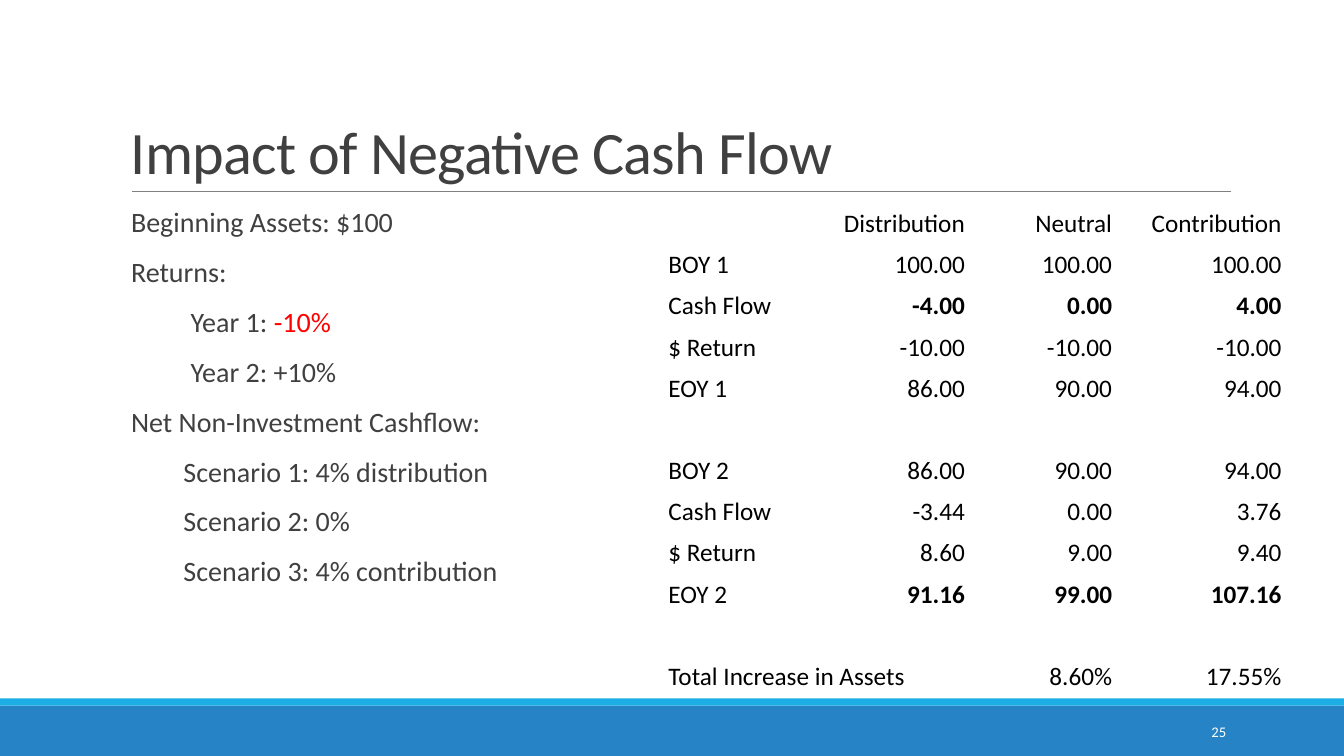
from dataclasses import dataclass
from pptx import Presentation
from pptx.dml.color import RGBColor
from pptx.enum.shapes import MSO_CONNECTOR, MSO_SHAPE
from pptx.enum.text import MSO_ANCHOR, PP_ALIGN
from pptx.oxml.ns import qn
from pptx.util import Inches, Pt
from lxml.etree import SubElement


@dataclass(frozen=True)
class Theme:
    font: str = "Calibri"
    band: str = "2683C6"
    strip: str = "1CADE4"
    rule: str = "808080"
    text: str = "404040"
    loss: str = "FF0000"
    cell: str = "000000"
    page: str = "FFFFFF"
    title_size: float = 43
    body_size: float = 20
    cell_size: float = 18
    page_size: float = 10.5


BODY = [
    (0.1, ["Beginning Assets: $100"]),
    (0.1, ["Returns:"]),
    (0.69, ["Year 1: ", "-10%"]),
    (0.69, ["Year 2: +10%"]),
    (0.1, ["Net Non-Investment Cashflow:"]),
    (0.62, ["Scenario 1: 4% distribution"]),
    (0.62, ["Scenario 2: 0%"]),
    (0.62, ["Scenario 3: 4% contribution"]),
]
FLOWS = [
    ["", "Distribution", "Neutral", "Contribution"],
    ["BOY 1", "100.00", "100.00", "100.00"],
    ["Cash Flow", "-4.00", "0.00", "4.00"],
    ["$ Return", "-10.00", "-10.00", "-10.00"],
    ["EOY 1", "86.00", "90.00", "94.00"],
    [""] * 4,
    ["BOY 2", "86.00", "90.00", "94.00"],
    ["Cash Flow", "-3.44", "0.00", "3.76"],
    ["$ Return", "8.60", "9.00", "9.40"],
    ["EOY 2", "91.16", "99.00", "107.16"],
    [""] * 4,
    ["Total Increase in Assets", "", "8.60%", "17.55%"],
]
BOLD_ROWS = {2, 9}


class Deck:
    """Holds the theme and draws on the current slide; lengths are in inches."""

    def __init__(self, theme):
        self.theme = theme
        self.file = Presentation()
        self.file.slide_width = Inches(13.33)
        self.file.slide_height = Inches(7.5)
        self.slide = self.file.slides.add_slide(self.file.slide_layouts[6])

    def style(self, para, size, color, bold=False):
        font = para.font
        font.name, font.size, font.bold = self.theme.font, Pt(size), bold
        font.color.rgb = RGBColor.from_string(color)

    def bar(self, top, height, color):
        bar = self.slide.shapes.add_shape(
            MSO_SHAPE.RECTANGLE, 0, Inches(top), self.file.slide_width, Inches(height))
        bar.shadow.inherit = False
        bar.fill.solid()
        bar.fill.fore_color.rgb = RGBColor.from_string(color)
        bar.line.fill.background()

    def rule(self, left, right, top):
        rule = self.slide.shapes.add_connector(
            MSO_CONNECTOR.STRAIGHT, Inches(left), Inches(top), Inches(right), Inches(top))
        rule.line.color.rgb = RGBColor.from_string(self.theme.rule)
        rule.line.width = Pt(0.5)
        SubElement(rule._element.spPr, qn("a:effectLst"))

    def frame(self, box, anchor):
        frame = self.slide.shapes.add_textbox(*map(Inches, box)).text_frame
        frame.word_wrap = True
        frame.vertical_anchor = anchor
        return frame

    def line(self, box, text, size, color, anchor, align=PP_ALIGN.LEFT):
        para = self.frame(box, anchor).paragraphs[0]
        para.alignment = align
        para.add_run().text = text
        self.style(para, size, color)
        return para

    def title(self, box, text):
        theme = self.theme
        para = self.line(box, text, theme.title_size, theme.text, MSO_ANCHOR.BOTTOM)
        para.line_spacing = 0.85
        para.runs[0].font._element.set("spc", "-50")

    def body(self, box, items):
        """Draws (indent, runs) items; a second run shows a loss."""
        theme = self.theme
        frame = self.frame(box, MSO_ANCHOR.TOP)
        frame.margin_left = frame.margin_right = 0
        for i, (indent, parts) in enumerate(items):
            para = frame.add_paragraph() if i else frame.paragraphs[0]
            para.line_spacing = 0.9
            para.space_before, para.space_after = Pt(12), Pt(2)
            para._p.get_or_add_pPr().set("marL", str(Inches(indent)))
            self.style(para, theme.body_size, theme.text)
            for part in parts:
                para.add_run().text = part
            for run in para.runs[1:]:
                run.font.color.rgb = RGBColor.from_string(theme.loss)

    def table(self, box, widths, rows):
        theme = self.theme
        table = self.slide.shapes.add_table(
            len(rows), len(widths), *map(Inches, box)).table
        table.first_row = table.horz_banding = False
        for col, width in zip(table.columns, widths):
            col.width = Inches(width)
        for r, row in enumerate(rows):
            for c, text in enumerate(row):
                cell = table.cell(r, c)
                cell.fill.background()
                cell.vertical_anchor = MSO_ANCHOR.TOP if r else MSO_ANCHOR.MIDDLE
                para = cell.text_frame.paragraphs[0]
                para.alignment = PP_ALIGN.RIGHT if c else PP_ALIGN.LEFT
                self.style(para, theme.cell_size, theme.cell, c > 0 and r in BOLD_ROWS)
                if text:
                    para.add_run().text = text
        last = len(rows) - 1
        table.cell(last, 0).merge(table.cell(last, 1))


def main():
    theme = Theme()
    deck = Deck(theme)
    deck.bar(7, 0.5, theme.band)
    deck.bar(6.93, 0.07, theme.strip)
    deck.rule(1.31, 12.21, 1.9)
    deck.title((1.2, 0.31, 11, 1.59), "Impact of Negative Cash Flow")
    deck.body((1.2, 2.02, 4.44, 3.95), BODY)
    deck.table((6.53, 2.02, 6.28, 4.9), [1.46, 1.68] * 2, FLOWS)
    deck.line((10.83, 7.06, 1.43, 0.4), "25", theme.page_size, theme.page,
              MSO_ANCHOR.MIDDLE, PP_ALIGN.RIGHT)
    deck.file.save("out.pptx")


if __name__ == "__main__":
    main()
